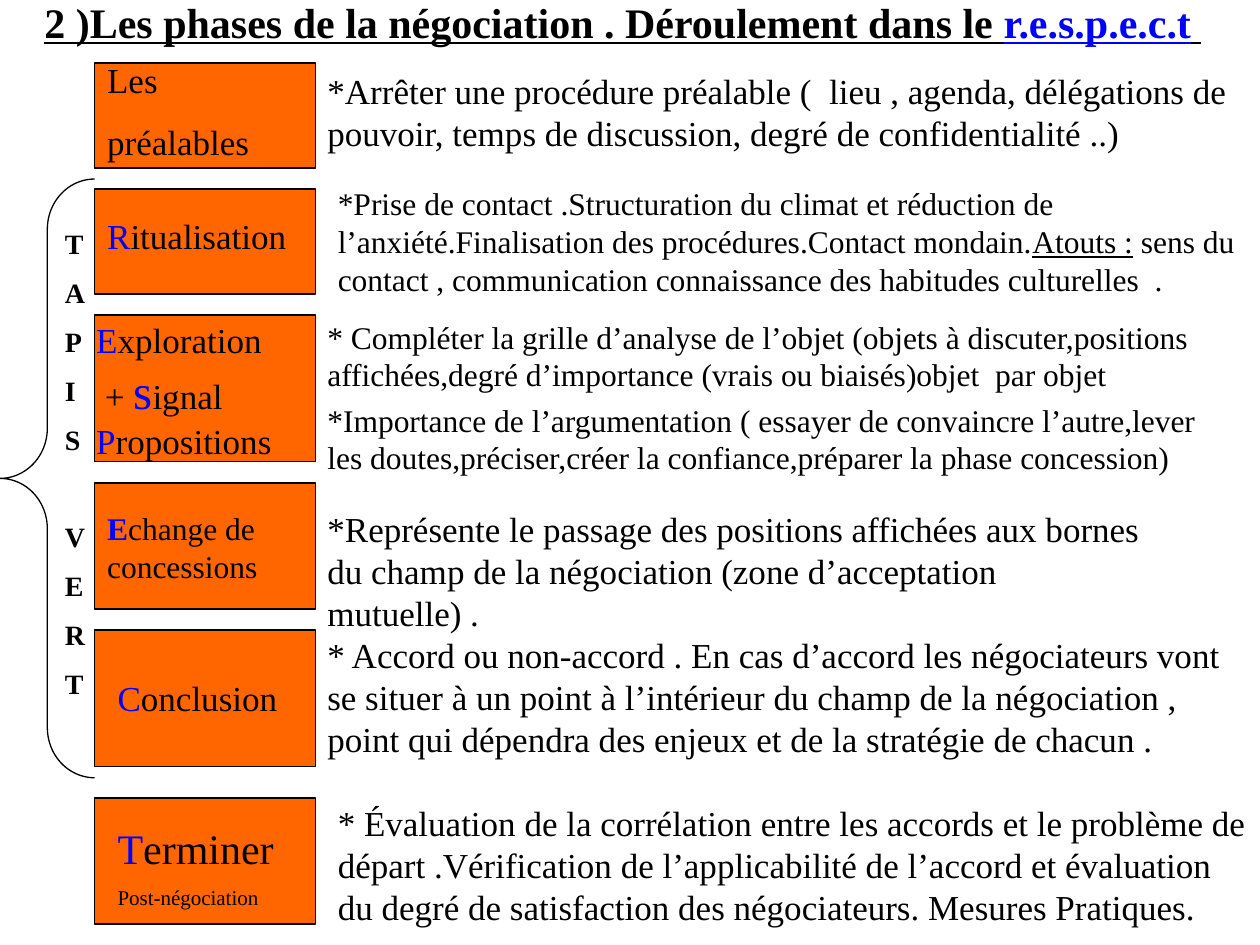
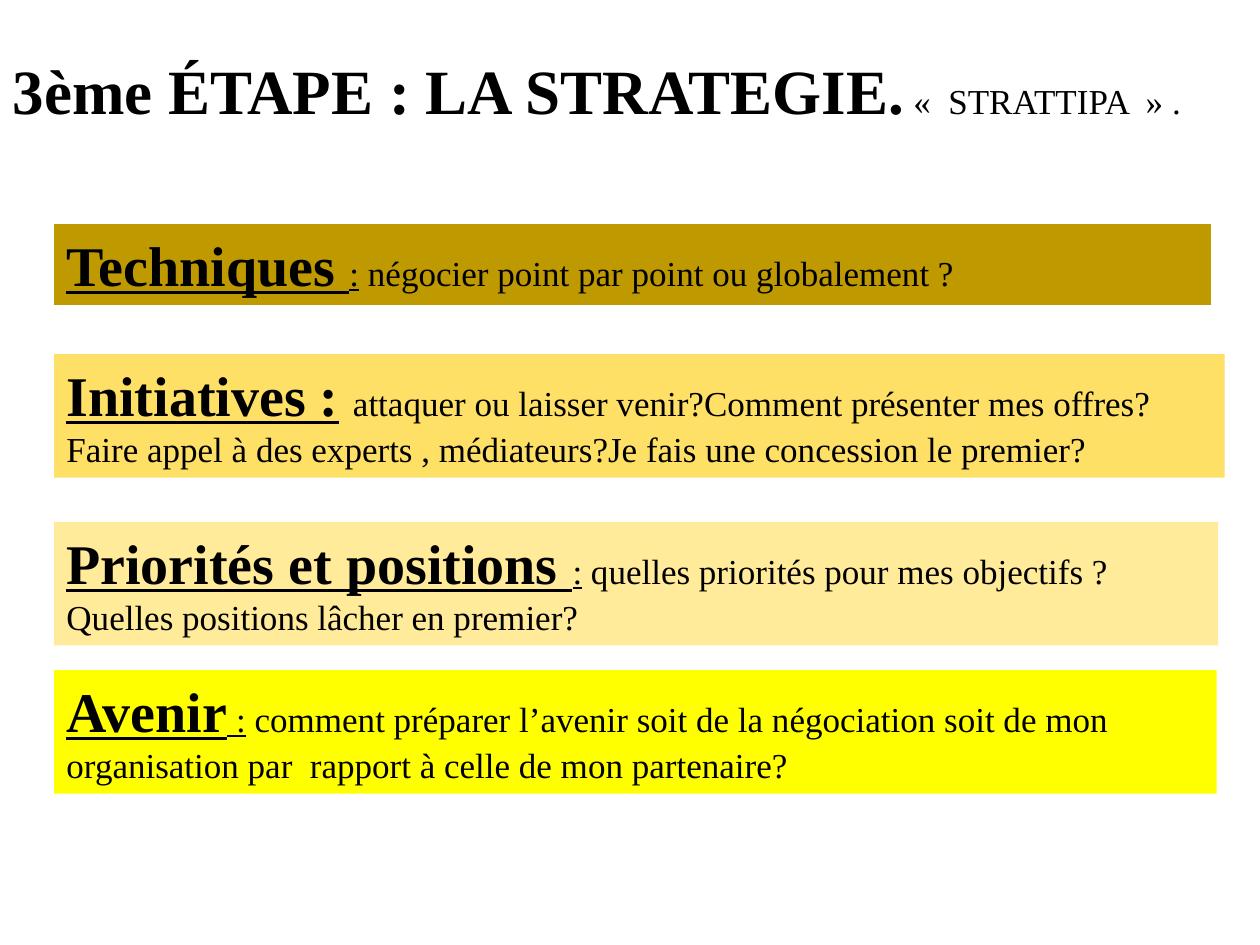
from dataclasses import dataclass
from typing import NamedTuple

from pptx import Presentation
from pptx.dml.color import RGBColor
from pptx.enum.shapes import MSO_SHAPE
from pptx.enum.text import MSO_ANCHOR, MSO_AUTO_SIZE, PP_ALIGN
from pptx.util import Cm, Pt

RECTANGLE = MSO_SHAPE.RECTANGLE
LEFT_BRACE = MSO_SHAPE.LEFT_BRACE
TOP = MSO_ANCHOR.TOP
LEFT = PP_ALIGN.LEFT
FIT_SHAPE = MSO_AUTO_SIZE.SHAPE_TO_FIT_TEXT
NO_FIT = MSO_AUTO_SIZE.NONE

FONT = "Times New Roman"
COLORS = {
    "black": "000000",
    "blue": "0000FF",
    "orange": "FF6600",
    "ochre": "BF9900",
    "gold": "FFE066",
    "cream": "FFEB99",
    "yellow": "FFFF00",
}
TITLE_ONLY = 5
GAP_RATIO = 0.55  # space before a paragraph, relative to its text size
PHASE_LEFT, PHASE_WIDTH = 1.91, 4.45
BAR_LEFT = 1.09


class Area(NamedTuple):
    """Left, top, width and height in centimetres."""
    left: float
    top: float
    width: float
    height: float


class Span(NamedTuple):
    text: str
    size: float = 20
    color: str = "black"
    bold: bool = False
    underline: bool = False


Paragraphs = list[list[Span]]


@dataclass
class Phase:
    top: float
    height: float
    label_area: Area
    label: Paragraphs
    details: list[tuple[Area, list[Span]]]
    spaced: bool = True


@dataclass
class Bar:
    top: float
    width: float
    height: float
    color: str
    spans: list[Span]


def initial(letter: str, rest: str, size: float = 20, bold: bool = False) -> list[Span]:
    """A word whose first letter stands out in blue."""
    return [Span(letter, size, "blue", bold), Span(rest, size)]


PHASES = [
    Phase(1.27, 2.12, Area(1.91, 1.06, 4.02, 2.36),
          [[Span("Les")], [Span("préalables")]],
          [(Area(6.35, 1.27, 19.05, 1.95), [Span(
              "*Arrêter une procédure préalable (  lieu , agenda, délégations de "
              "pouvoir, temps de discussion, degré de confidentialité ..)")])]),
    Phase(3.81, 2.12, Area(1.91, 4.19, 4.23, 1.1),
          [initial("R", "itualisation")],
          [(Area(6.56, 3.59, 18.84, 2.55), [
              Span("*Prise de contact .Structuration du climat et réduction de "
                   "l’anxiété.Finalisation des procédures.Contact mondain.", 18),
              Span("Atouts :", 18, underline=True),
              Span(" sens du contact , communication connaissance des habitudes "
                   "culturelles  .", 18)])]),
    Phase(6.35, 2.96, Area(1.69, 6.3, 5.72, 3.13),
          [initial("E", "xploration"),
           [Span(" + "), Span("s", 28, "blue"), Span("ignal")],
           initial("P", "ropositions")],
          [(Area(6.35, 6.28, 18.63, 1.78), [Span(
              "* Compléter la grille d’analyse de l’objet (objets à discuter,positions "
              "affichées,degré d’importance (vrais ou biaisés)objet  par objet", 18)]),
           (Area(6.35, 7.95, 18.2, 1.78), [Span(
               "*Importance de l’argumentation ( essayer de convaincre l’autre,lever les "
               "doutes,préciser,créer la confiance,préparer la phase concession)", 18)])],
          spaced=False),
    Phase(9.74, 2.54, Area(1.91, 10.14, 4.45, 1.78),
          [initial("E", "change de concessions", 18, bold=True)],
          [(Area(6.35, 10.11, 17.15, 2.79), [Span(
              "*Représente le passage des positions affichées aux bornes du champ de "
              "la négociation (zone d’acceptation mutuelle) .")])]),
    Phase(12.7, 2.75, Area(2.12, 13.52, 4.02, 1.1),
          [initial("C", "onclusion")],
          [(Area(6.35, 12.65, 19.05, 4.06), [Span(
              "* Accord ou non-accord . En cas d’accord les négociateurs vont se situer "
              "à un point à l’intérieur du champ de la négociation , point qui dépendra "
              "des enjeux et de la stratégie de chacun .")])]),
    Phase(16.09, 2.54, Area(2.12, 16.46, 3.81, 2.03),
          [initial("T", "erminer", 24), [Span("Post-négociation", 12)]],
          [(Area(6.56, 16.04, 18.84, 2.79), [Span(
              "* Évaluation de la corrélation entre les accords et le problème de départ "
              ".Vérification de l’applicabilité de l’accord et évaluation du degré de "
              "satisfaction des négociateurs. Mesures Pratiques.")])]),
]


def heading(text: str) -> Span:
    return Span(text, 32, bold=True, underline=True)


BARS = [
    Bar(4.52, 23.32, 1.63, "ochre", [
        heading("Techniques "), Span(":", underline=True),
        Span(" négocier point par point ou globalement ?")]),
    Bar(7.14, 23.6, 2.49, "gold", [
        heading("Initiatives :"), Span(" ", 32, bold=True),
        Span("attaquer ou laisser venir?Comment présenter mes offres?Faire appel à des "
             "experts , médiateurs?Je fais une concession le premier?")]),
    Bar(10.52, 23.47, 2.49, "cream", [
        heading("Priorités et positions "), Span(":", underline=True),
        Span(" quelles priorités pour mes objectifs ? Quelles positions lâcher en "
             "premier?")]),
    Bar(13.51, 23.44, 2.49, "yellow", [
        heading("Avenir"), Span(" :", underline=True),
        Span(" comment préparer l’avenir soit de la négociation soit de mon "
             "organisation par  rapport à celle de mon partenaire?")]),
]


def rgb(name: str) -> RGBColor:
    return RGBColor.from_string(COLORS[name])


def lengths(area: Area) -> list[Cm]:
    return [Cm(value) for value in area]


def write(frame, paragraphs: Paragraphs, spaced: bool = True) -> None:
    frame.word_wrap = True
    frame.vertical_anchor = TOP
    for index, spans in enumerate(paragraphs):
        paragraph = frame.add_paragraph() if index else frame.paragraphs[0]
        paragraph.alignment = LEFT
        if index and spaced:
            paragraph.space_before = Pt(GAP_RATIO * spans[0].size)
        for span in spans:
            run = paragraph.add_run()
            run.text = span.text
            font = run.font
            font.name = FONT
            font.size = Pt(span.size)
            font.bold = span.bold
            font.underline = span.underline
            font.color.rgb = rgb(span.color)


def add_titled_page(deck, area: Area, spans: list[Span]):
    page = deck.slides.add_slide(deck.slide_layouts[TITLE_ONLY])
    title = page.shapes.title
    title.left, title.top, title.width, title.height = lengths(area)
    write(title.text_frame, [spans])
    title.text_frame.auto_size = NO_FIT
    return page


def add_text(page, area: Area, paragraphs: Paragraphs, spaced: bool = True):
    box = page.shapes.add_textbox(*lengths(area))
    write(box.text_frame, paragraphs, spaced)
    box.text_frame.auto_size = FIT_SHAPE
    return box


def add_form(page, kind, area: Area, fill: str = "", line: str = ""):
    form = page.shapes.add_shape(kind, *lengths(area))
    form.shadow.inherit = False
    if fill:
        form.fill.solid()
        form.fill.fore_color.rgb = rgb(fill)
    else:
        form.fill.background()
    if line:
        form.line.color.rgb = rgb(line)
        form.line.width = Pt(0.75)
    else:
        form.line.fill.background()
    return form


def add_phases_page(deck) -> None:
    page = add_titled_page(deck, Area(0.64, -0.2, 23.93, 1.27), [
        Span("2 )Les phases de la négociation . Déroulement dans le ", 24,
             bold=True, underline=True),
        Span("r.e.s.p.e.c.t", 24, "blue", True, True),
        Span(" ", 24, bold=True, underline=True)])
    page.shapes.title.text_frame.word_wrap = False

    for phase in PHASES:
        area = Area(PHASE_LEFT, phase.top, PHASE_WIDTH, phase.height)
        add_form(page, RECTANGLE, area, "orange", "black")
        add_text(page, phase.label_area, phase.label, phase.spaced)
        for detail_area, spans in phase.details:
            add_text(page, detail_area, [spans])

    brace = add_form(page, LEFT_BRACE, Area(0, 3.61, 1.91, 12.07), line="black")
    brace.adjustments[0] = 0.53

    first_word, second_word = "TAPIS", "VERT"
    letters = [[Span(letter, 16, bold=True)] for letter in first_word + second_word]
    carpet = add_text(page, Area(1.06, 4.45, 1.06, 10.11), letters)
    carpet.text_frame.paragraphs[len(first_word)].space_before = Pt(36)


def add_strategy_page(deck) -> None:
    page = add_titled_page(deck, Area(0, 0.91, 25.48, 1.8), [
        Span("3ème ÉTAPE : LA STRATEGIE.", 36, bold=True),
        Span(" «  STRATTIPA  » .")])
    for bar in BARS:
        area = Area(BAR_LEFT, bar.top, bar.width, bar.height)
        form = add_form(page, RECTANGLE, area, bar.color)
        write(form.text_frame, [bar.spans])
        form.text_frame.auto_size = FIT_SHAPE


def main() -> None:
    deck = Presentation()
    deck.slide_width, deck.slide_height = Cm(25.4), Cm(19.05)
    add_phases_page(deck)
    add_strategy_page(deck)
    deck.save("out.pptx")


if __name__ == "__main__":
    main()
